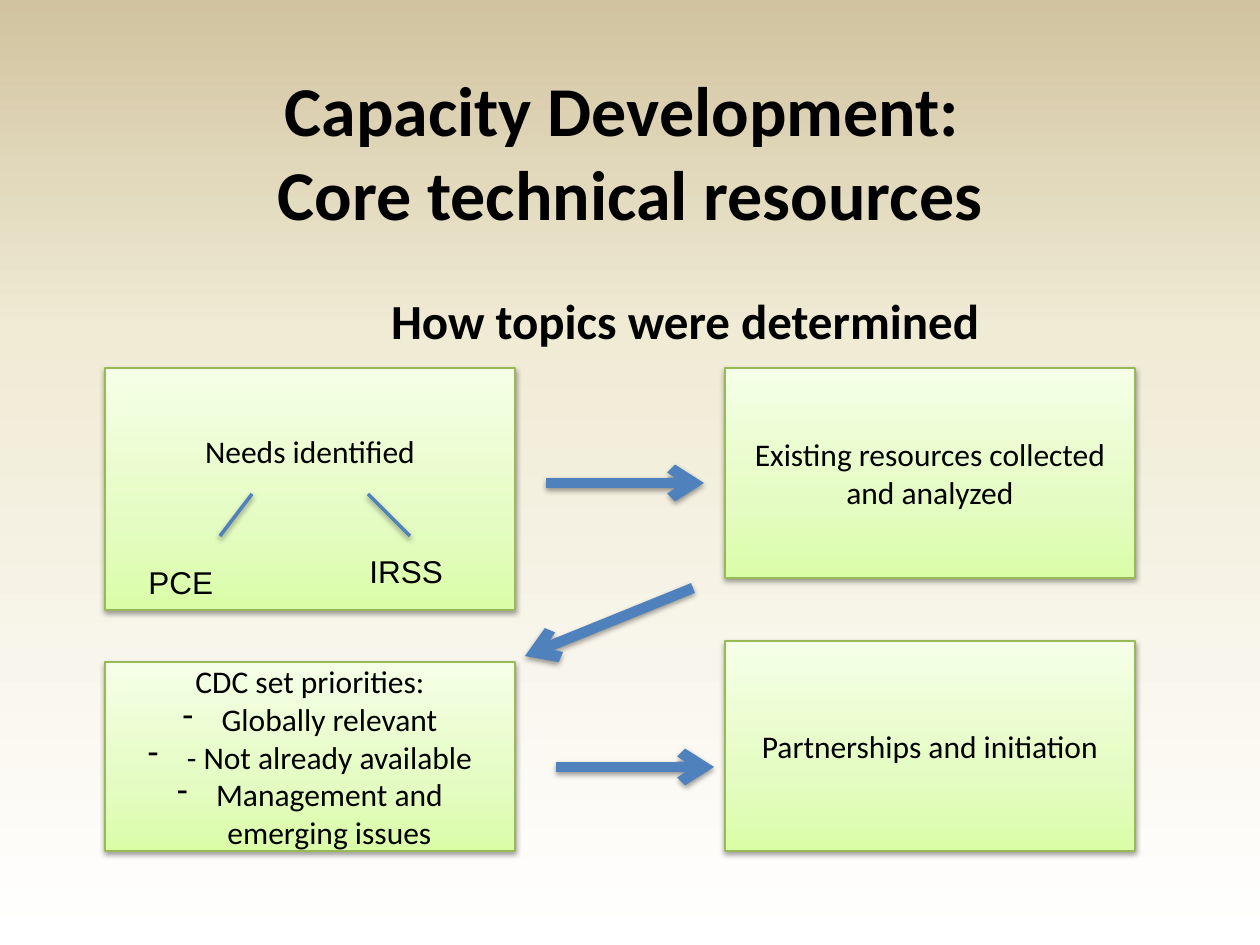
import dataclasses
import lxml.etree
import pptx
import pptx.util
import pptx.dml.color
import pptx.enum.shapes
import pptx.enum.text
import pptx.oxml.ns

qn = pptx.oxml.ns.qn
ALIGN = pptx.enum.text.PP_ALIGN
ANCHOR = pptx.enum.text.MSO_ANCHOR
SIZING = pptx.enum.text.MSO_AUTO_SIZE


@dataclasses.dataclass(frozen=True)
class Theme:
    ink: str = "000000"
    edge: str = "98B955"
    link: str = "4F81BD"
    back: tuple = ((0, "FFFFFF"), (65, "F0EBD5"), (100, "D1C39F"))
    green: tuple = ((0, "DAFDA7"), (35, "E4FCC2"), (100, "F5FFE7"))
    head: str = "Calibri"
    label: str = "Arial"
    title: int = 40
    topic: int = 28
    text: int = 18


THEME = Theme()


def px(count):
    return round(count * 914400 / 126)


def color(code):
    return pptx.dml.color.RGBColor.from_string(code)


def add(parent, tag, **attrs):
    return lxml.etree.SubElement(parent, qn(tag), attrs)


def blend(fill, root, stops):
    fill.gradient()
    fill.gradient_angle = 90
    group = root.find(".//" + qn("a:gsLst"))
    for old in list(group):
        group.remove(old)
    for place, code in stops:
        stop = add(group, "a:gs", pos=str(place * 1000))
        add(stop, "a:srgbClr", val=code)


def shade(shape):
    effect = add(shape.element.spPr, "a:effectLst")
    shadow = add(effect, "a:outerShdw", blurRad="40000", dist="20000",
                 dir="5400000", rotWithShape="0")
    tint = add(shadow, "a:srgbClr", val="000000")
    add(tint, "a:alpha", val="38000")


def style(frame, size, face=THEME.head, bold=False, align=ALIGN.CENTER):
    for para in frame.paragraphs:
        para.alignment = align
        for run in para.runs:
            run.font.size = pptx.util.Pt(size)
            run.font.name = face
            run.font.bold = bold
            run.font.color.rgb = color(THEME.ink)


def indent(para, left, first, mark=None):
    props = para._p.get_or_add_pPr()
    props.set("marL", str(px(left)))
    props.set("indent", str(px(first)))
    if mark:
        add(props, "a:buChar", char=mark)
    else:
        add(props, "a:buNone")


def place(shape, left, top, width, height):
    shape.left, shape.top = px(left), px(top)
    shape.width, shape.height = px(width), px(height)


def add_title(slide, text):
    title = slide.shapes.title
    place(title, 63, 126, 1134, 126)
    frame = title.text_frame
    frame.text = text
    frame.auto_size = SIZING.NONE
    frame.vertical_anchor = ANCHOR.MIDDLE
    frame.margin_bottom = px(84)
    style(frame, THEME.title, bold=True)


def add_topic(slide, text):
    body = slide.placeholders[1]
    place(body, 63, 284, 1134, 529)
    frame = body.text_frame
    frame.text = text
    frame.auto_size = SIZING.NONE
    para = frame.paragraphs[0]
    para.level = 1
    indent(para, 110, 0)
    para.space_before = pptx.util.Pt(0)
    style(frame, THEME.topic, bold=True)


def add_box(slide, left, top, height, text, points=(), lift=0):
    kind = pptx.enum.shapes.MSO_SHAPE.FLOWCHART_PROCESS
    box = slide.shapes.add_shape(kind, px(left), px(top), px(410), px(height))
    blend(box.fill, box.element, THEME.green)
    box.line.color.rgb = color(THEME.edge)
    box.line.width = pptx.util.Pt(0.75)
    shade(box)
    frame = box.text_frame
    frame.text = text
    frame.word_wrap = True
    frame.vertical_anchor = ANCHOR.MIDDLE
    frame.margin_bottom = px(6 + lift)
    for point in points:
        para = frame.add_paragraph()
        para.text = point
        indent(para, 39, -39, "-")
    style(frame, THEME.text)


def add_label(slide, left, top, text):
    label = slide.shapes.add_textbox(px(left), px(top), px(136), px(53))
    frame = label.text_frame
    frame.text = text
    frame.word_wrap = True
    frame.auto_size = SIZING.SHAPE_TO_FIT_TEXT
    style(frame, THEME.text, THEME.label, align=ALIGN.LEFT)


def add_link(slide, start, end, width, arrow=False):
    kind = pptx.enum.shapes.MSO_CONNECTOR.STRAIGHT
    link = slide.shapes.add_connector(kind, *map(px, start + end))
    link.line.color.rgb = color(THEME.link)
    link.line.width = pptx.util.Pt(width)
    if arrow:
        add(link.element.spPr.find(qn("a:ln")), "a:tailEnd", type="arrow")
    shade(link)


def main():
    deck = pptx.Presentation()
    deck.slide_width, deck.slide_height = px(1260), px(945)
    slide = deck.slides.add_slide(deck.slide_layouts[1])
    blend(slide.background.fill, slide.element, THEME.back)

    add_title(slide, "Capacity Development: \vCore technical resources")
    add_topic(slide, "How topics were determined")

    left, right = 105, 725
    add_box(slide, left, 368, 242, "Needs identified", lift=76)
    add_box(slide, right, 368, 210, "Existing resources collected and analyzed")
    add_box(slide, left, 662, 189, "CDC set priorities:",
            ("Globally relevant", "- Not already available",
             "Management and emerging issues"))
    add_box(slide, right, 641, 210, "Partnerships and initiation")

    add_link(slide, (252, 494), (220, 536), 2)
    add_link(slide, (368, 494), (410, 536), 2)
    add_label(slide, 136, 557, "PCE")
    add_label(slide, 357, 546, "IRSS")

    for start, end in (((693, 588), (525, 656)),
                       ((546, 483), (704, 483)),
                       ((556, 767), (714, 767))):
        add_link(slide, start, end, 6, arrow=True)

    deck.save("out.pptx")


if __name__ == "__main__":
    main()
